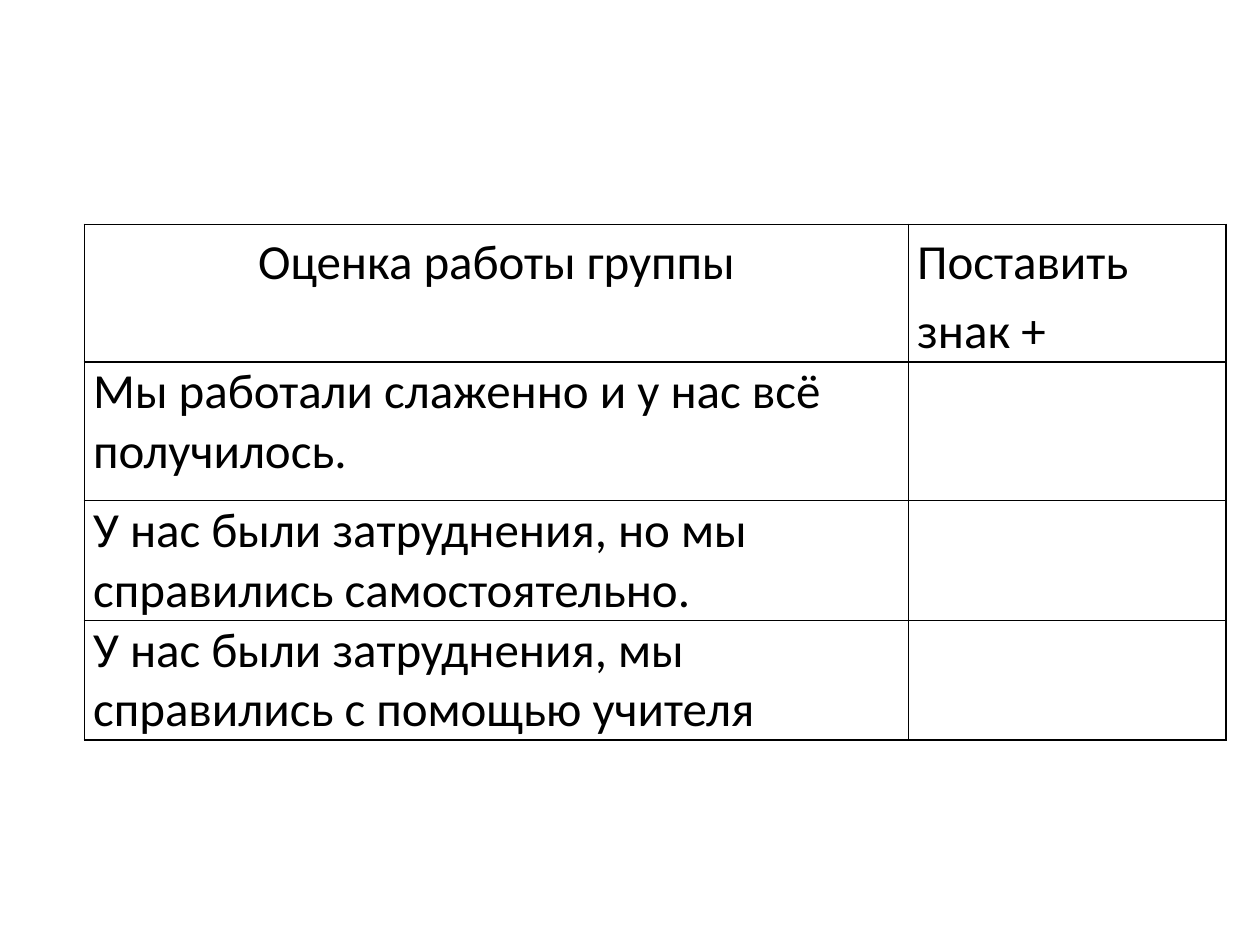
from lxml.etree import SubElement
from pptx import Presentation
from pptx.dml.color import RGBColor
from pptx.enum.text import PP_ALIGN as Align
from pptx.oxml.ns import qn
from pptx.util import Inches, Pt

BLACK, WHITE = "000000", "FFFFFF"
FONT, TEXT_SIZE = "Calibri", 28
LEFT, TOP = 0.67, 1.78
COLUMNS = [6.54, 2.52]
ROWS = [1.09, 1.1, 0.95, 0.95]
HEADINGS = [("Оценка работы группы", Align.CENTER), ("Поставить знак +", Align.LEFT)]
STATEMENTS = [
    "Мы работали слаженно и у нас всё получилось.",
    "У нас были затруднения, но мы справились самостоятельно.",
    "У нас были затруднения, мы справились с помощью учителя",
]


def color(value):
    return RGBColor.from_string(value)


def add_borders(cell, value, width):
    properties = cell._tc.get_or_add_tcPr()
    for position, side in enumerate(("lnL", "lnR", "lnT", "lnB")):
        line = SubElement(properties, qn(f"a:{side}"), w=str(Pt(width)))
        fill = SubElement(line, qn("a:solidFill"))
        SubElement(fill, qn("a:srgbClr"), val=value)
        properties.insert(position, line)  # borders come before the fill


def style_cell(cell):
    cell.fill.solid()
    cell.fill.fore_color.rgb = color(WHITE)
    cell.margin_left = cell.margin_right = Inches(0.07)
    cell.margin_top = cell.margin_bottom = 0
    add_borders(cell, BLACK, 1)


def write_cell(cell, text, align=Align.LEFT, spacing=1.0):
    cell.text_frame.text = text
    para = cell.text_frame.paragraphs[0]
    para.alignment = align
    para.line_spacing = spacing
    font = para.runs[0].font
    font.name, font.size, font.bold = FONT, Pt(TEXT_SIZE), False
    font.color.rgb = color(BLACK)


def add_grid(page):
    frame = page.shapes.add_table(
        len(ROWS), len(COLUMNS), Inches(LEFT), Inches(TOP),
        Inches(sum(COLUMNS)), Inches(sum(ROWS)))
    table = frame.table
    table.first_row = table.horz_banding = False
    for column, width in zip(table.columns, COLUMNS):
        column.width = Inches(width)
    for row, height in zip(table.rows, ROWS):
        row.height = Inches(height)
    for cell in table.iter_cells():
        style_cell(cell)
    return table


def main():
    deck = Presentation()
    deck.slide_width, deck.slide_height = Inches(10), Inches(7.5)
    page = deck.slides.add_slide(deck.slide_layouts[6])

    # Group assessment table: headings, then statements with an empty mark column
    table = add_grid(page)
    for column, (heading, align) in enumerate(HEADINGS):
        write_cell(table.cell(0, column), heading, align, spacing=1.15)
    for row, statement in enumerate(STATEMENTS, start=1):
        write_cell(table.cell(row, 0), statement)

    deck.save("out.pptx")


if __name__ == "__main__":
    main()
